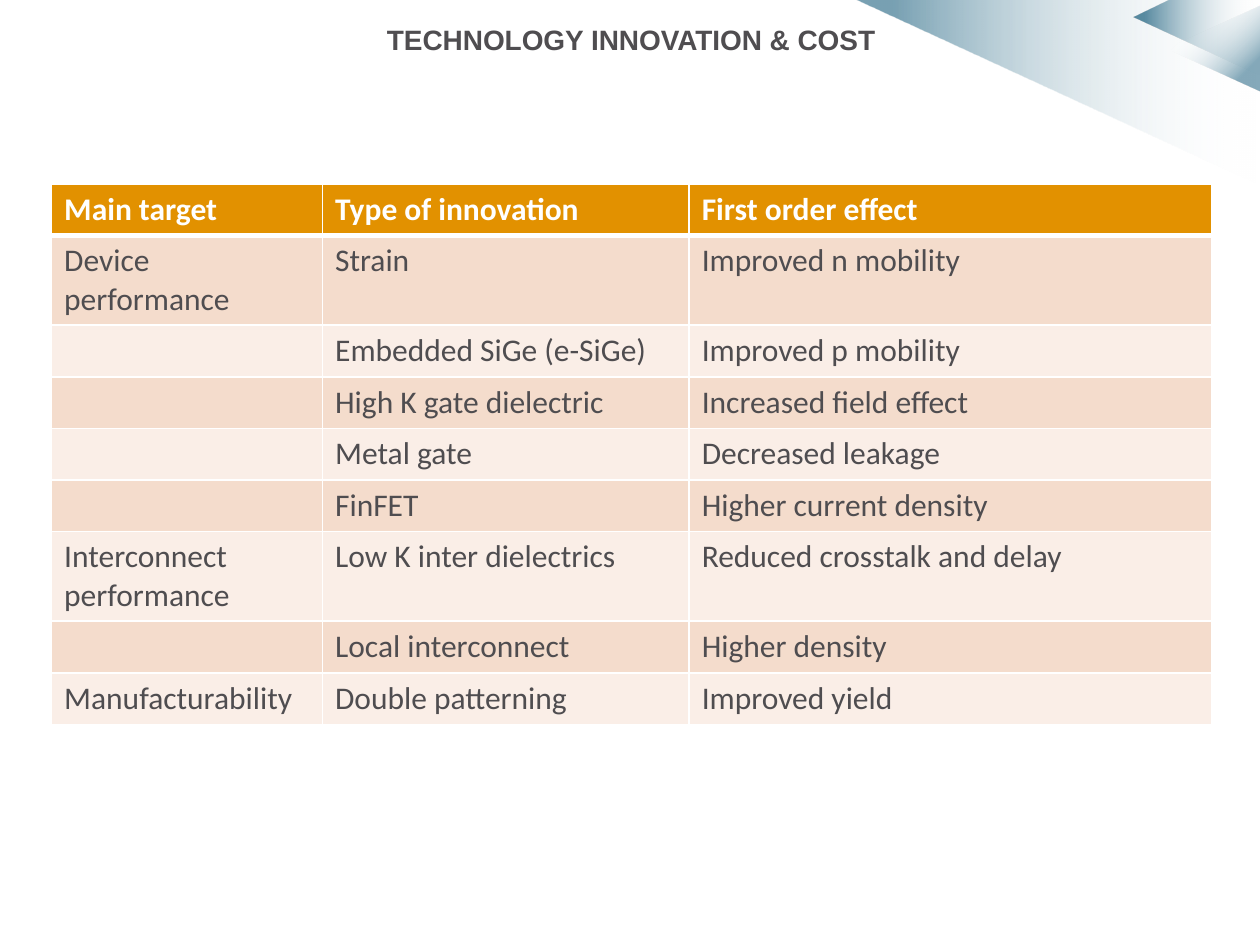
from lxml.etree import SubElement
from pptx import Presentation
from pptx.dml.color import RGBColor
from pptx.enum.shapes import MSO_SHAPE as Shape
from pptx.enum.text import MSO_ANCHOR, MSO_AUTO_SIZE, PP_ALIGN
from pptx.oxml import parse_xml
from pptx.oxml.ns import nsdecls, qn
from pptx.util import Inches, Pt

COLORS = {
    "ink": "4F4D50",
    "white": "FFFFFF",
    "header": "E29100",
    "odd": "F4DCCC",
    "even": "FAEEE7",
    "teal": "004D6F",
}
COLUMN_WIDTHS = [2.15, 2.91, 4.15]
ROW_HEIGHT = 0.41
INNOVATIONS = [
    ("Main target", "Type of innovation", "First order effect"),
    ("Device performance", "Strain", "Improved n mobility"),
    ("", "Embedded SiGe (e-SiGe)", "Improved p mobility"),
    ("", "High K gate dielectric", "Increased field effect"),
    ("", "Metal gate", "Decreased leakage"),
    ("", "FinFET", "Higher current density"),
    ("Interconnect performance", "Low K inter dielectrics", "Reduced crosstalk and delay"),
    ("", "Local interconnect", "Higher density"),
    ("Manufacturability", "Double patterning", "Improved yield"),
]


def color(name):
    """Return the named colour."""
    return RGBColor.from_string(COLORS[name])


def style_run(run, font_name, size, color_name, bold):
    """Set the font of a run."""
    font = run.font
    font.name, font.size, font.bold = font_name, Pt(size), bold
    font.color.rgb = color(color_name)


def fade(shape, start, end, opacity, angle):
    """Fill a shape from clear white to translucent teal, without outline."""
    shape.shadow.inherit = False
    shape.line.fill.background()
    shape.fill.background()
    no_fill = shape._element.spPr.find(qn("a:noFill"))
    gradient = parse_xml(
        f'<a:gradFill {nsdecls("a")} rotWithShape="1"><a:gsLst>'
        f'<a:gs pos="{start * 1000}"><a:srgbClr val="{COLORS["white"]}">'
        f'<a:alpha val="0"/></a:srgbClr></a:gs>'
        f'<a:gs pos="{end * 1000}"><a:srgbClr val="{COLORS["teal"]}">'
        f'<a:alpha val="{opacity * 1000}"/></a:srgbClr></a:gs>'
        f'</a:gsLst><a:lin ang="{angle * 60000}" scaled="0"/></a:gradFill>'
    )
    no_fill.getparent().replace(no_fill, gradient)


def add_outline(slide, left, top, points):
    """Add a closed outline from points relative to left and top."""
    corners = [(Inches(left + x), Inches(top + y)) for x, y in points]
    builder = slide.shapes.build_freeform(*corners[0])
    builder.add_line_segments(corners[1:], close=True)
    return builder.convert_to_shape()


def add_corner(slide, left, top):
    """Draw the translucent wedges of the top right corner."""
    wedge = add_outline(slide, left, top, [(0, 0), (3.21, 0), (3.21, 1.47)])
    fade(wedge, 1, 91, 53, 180)
    facet = add_outline(
        slide, left + 2.21, top, [(0, 0.14), (0.29, 0), (1, 0), (1, 0.6)]
    )
    fade(facet, 1, 91, 63, 180)
    arrow = slide.shapes.add_shape(
        Shape.ISOSCELES_TRIANGLE,
        Inches(left + 2.5), Inches(top + 0.01), Inches(0.68), Inches(0.75),
    )
    arrow.rotation = 270
    fade(arrow, 27, 81, 48, 135)


def add_title(slide, left, top, width, height):
    """Place and format the slide title."""
    title = slide.shapes.title
    title.left, title.top = Inches(left), Inches(top)
    title.width, title.height = Inches(width), Inches(height)
    frame = title.text_frame
    frame.text = "TECHNOLOGY INNOVATION & COST"
    frame.auto_size = MSO_AUTO_SIZE.NONE
    frame.vertical_anchor = MSO_ANCHOR.TOP
    heading = frame.paragraphs[0]
    heading.alignment = PP_ALIGN.RIGHT
    style_run(heading.runs[0], "Arial", 16, "ink", True)


def set_borders(cell, top, bottom):
    """Give a cell white borders, with top and bottom widths in points."""
    properties = cell._tc.get_or_add_tcPr()
    for side, width in (("L", 1), ("R", 1), ("T", top), ("B", bottom)):
        line = SubElement(properties, qn(f"a:ln{side}"), w=str(Pt(width)))
        solid = SubElement(line, qn("a:solidFill"))
        SubElement(solid, qn("a:srgbClr"), val=COLORS["white"])


def add_innovations(slide, left, top):
    """Add the table of innovations and their effects."""
    count = len(INNOVATIONS)
    table = slide.shapes.add_table(
        count, len(COLUMN_WIDTHS), Inches(left), Inches(top),
        Inches(sum(COLUMN_WIDTHS)), Inches(ROW_HEIGHT * count),
    ).table
    table.horz_banding = False
    for column, width in zip(table.columns, COLUMN_WIDTHS):
        column.width = Inches(width)
    for r, entries in enumerate(INNOVATIONS):
        table.rows[r].height = Inches(ROW_HEIGHT)
        is_header = r == 0
        band = "header" if is_header else ("even", "odd")[r % 2]
        for c, entry in enumerate(entries):
            cell = table.cell(r, c)
            set_borders(cell, 3 if r == 1 else 1, 3 if is_header else 1)
            cell.fill.solid()
            cell.fill.fore_color.rgb = color(band)
            cell.text_frame.text = entry
            for run in cell.text_frame.paragraphs[0].runs:
                style_run(run, "Calibri", 18, "white" if is_header else "ink", is_header)


def main():
    """Build and save the slide."""
    deck = Presentation()
    deck.slide_width, deck.slide_height = Inches(10), Inches(7.5)
    slide = deck.slides.add_slide(deck.slide_layouts[5])
    add_corner(slide, 6.79, 0)
    add_innovations(slide, 0.41, 1.46)
    add_title(slide, 2.01, 0.13, 5.04, 0.46)
    deck.save("out.pptx")


if __name__ == "__main__":
    main()
